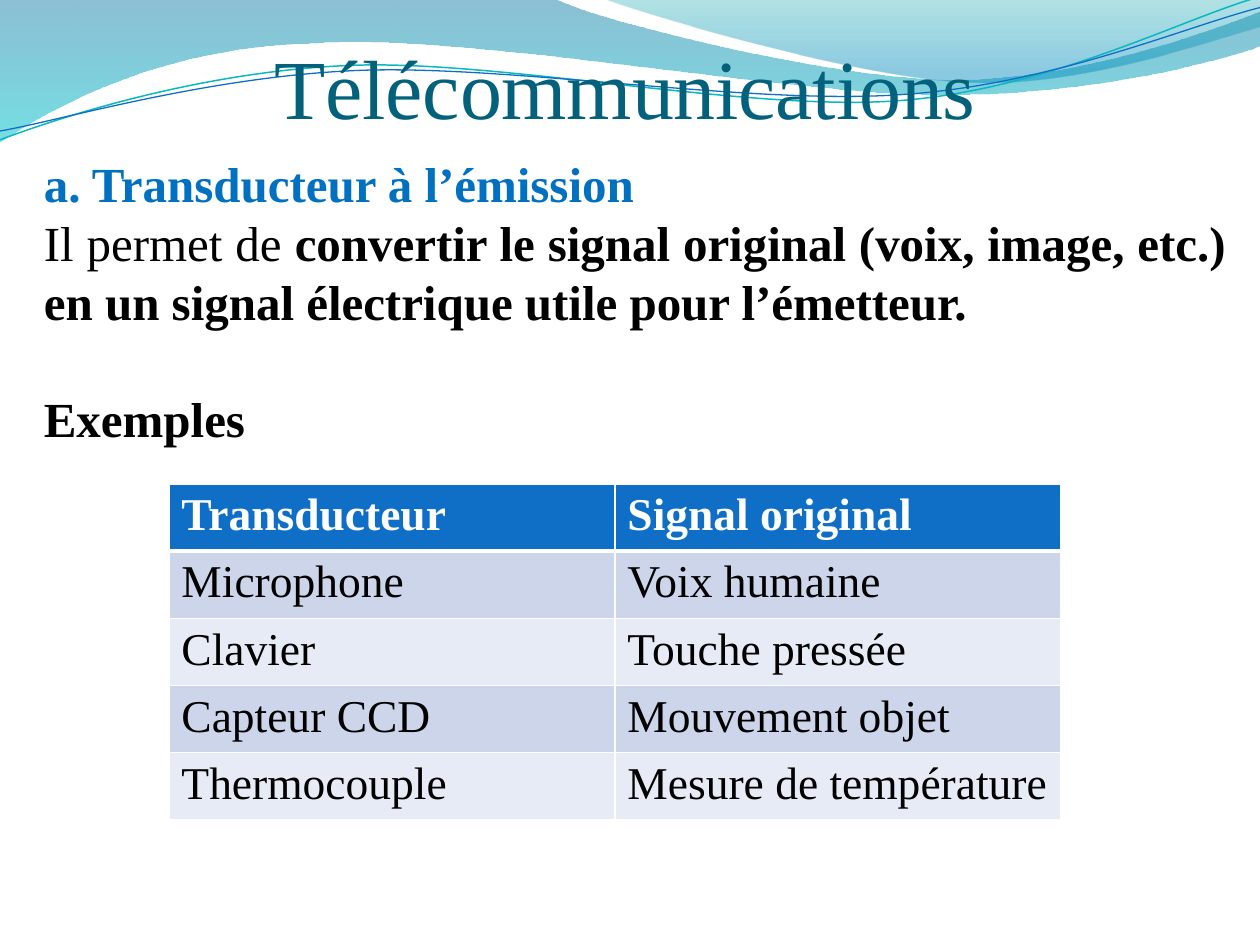
from lxml import etree
from pptx import Presentation
from pptx.dml.color import RGBColor
from pptx.enum.text import MSO_ANCHOR, PP_ALIGN
from pptx.oxml.ns import qn
from pptx.util import Inches, Pt

JUSTIFY, BOTTOM = PP_ALIGN.JUSTIFY, MSO_ANCHOR.BOTTOM
FONT = "Times New Roman"
COLORS = {
    "title": "04617B", "heading": "0070C0", "text": "000000", "white": "FFFFFF",
    "header": "0F6FC6", "band_dark": "CCD5EA", "band_light": "E7EBF5",
    "wave_top": "0074A1", "wave_bottom": "00C6CF",
    "crest_top": "00A1A9", "crest_bottom": "008BBF",
    "teal_line": "0AB8BF", "blue_line": "0F6FC6",
}


def rgb(name):
    return RGBColor.from_string(COLORS[name])


def add_curve(s, start, segments, closed):
    """Outline from line segments (x, y) and cubic Bezier segments (6 numbers)."""
    points = [(Inches(seg[i]), Inches(seg[i + 1]))
              for seg in segments for i in range(0, len(seg), 2)]
    fb = s.shapes.build_freeform(Inches(start[0]), Inches(start[1]))
    fb.add_line_segments(points, close=closed)
    sp = fb.convert_to_shape()
    sp.shadow.inherit = False
    # Join each curve's three points into one Bezier element
    lines = iter(list(sp._element.spPr.iter(qn("a:lnTo"))))
    for seg in segments:
        first = next(lines)
        if len(seg) == 6:
            first.tag = qn("a:cubicBezTo")
            for _ in range(2):
                line = next(lines)
                first.append(line[0])
                line.getparent().remove(line)
    return sp


prs = Presentation()
prs.slide_width, prs.slide_height = Inches(10), Inches(7.5)
s = prs.slides.add_slide(prs.slide_layouts[6])

# Translucent waves across the top
waves = [
    ((0, 0), [(4.4, -0.01), (4.76, 0.17, 6.64, 0.63, 7.58, 0.63),
              (8.53, 0.63, 9.58, 0.26, 10, 0.09), (10.01, 0.36),
              (9.83, 0.44, 8.7, 0.76, 7.46, 0.75),
              (6.22, 0.75, 3.82, 0.28, 2.57, 0.34),
              (1.29, 0.36, 0.46, 0.83, -0.01, 1.13)],
     [("wave_top", 0, 45), ("wave_bottom", 1, 55)]),
    ((4.79, -0.01), [(5.09, 0.11, 6.82, 0.62, 7.69, 0.65),
                     (8.56, 0.69, 9.61, 0.32, 10, 0.21), (10, 0)],
     [("crest_top", 0, 30), ("crest_bottom", 0.8, 45)]),
]
for start, segments, stops in waves:
    sp = add_curve(s, start, segments, True)
    sp.line.fill.background()
    sp.fill.gradient()
    sp.fill.gradient_angle = 270
    for stop, (color, position, _) in zip(sp.fill.gradient_stops, stops):
        stop.color.rgb = rgb(color)
        stop.position = position
    for clr, (_, _, opacity) in zip(sp._element.spPr.iter(qn("a:srgbClr")), stops):
        etree.SubElement(clr, qn("a:alpha")).set("val", str(opacity * 1000))

wave_lines = [
    ("teal_line", 0.85, (0, 1.11), [(0.48, 0.93, 1.58, 0.57, 2.77, 0.52),
                                    (3.95, 0.47, 5.93, 0.89, 7.13, 0.8),
                                    (8.33, 0.71, 9.38, 0.15, 9.98, -0.02)]),
    ("blue_line", 0.75, (0, 1.04), [(0.47, 0.96, 1.64, 0.61, 2.83, 0.56),
                                    (4.03, 0.51, 5.97, 0.84, 7.17, 0.75),
                                    (8.36, 0.67, 9.41, 0.21, 10, 0.06)]),
]
for color, width, start, segments in wave_lines:
    sp = add_curve(s, start, segments, False)
    sp.fill.background()
    sp.line.color.rgb = rgb(color)
    sp.line.width = Pt(width)

# Title and body text: (space before, alignment, [(text, colour, bold)])
title = [(0, None, [("Télécommunications", "title", False)])]
body = [
    (0, JUSTIFY, [("a. Transducteur à l’émission", "heading", True)]),
    (0, JUSTIFY, [("Il permet de ", "text", False),
                  ("convertir le signal original (voix, image, etc.) "
                   "en un signal électrique utile pour l’émetteur.", "text", True)]),
    (33.6, JUSTIFY, [("Exemples", "text", True)]),
]
title_box = s.shapes.add_textbox(Inches(2.18), Inches(0.26), Inches(5.67), Inches(0.82))
body_box = s.shapes.add_textbox(Inches(0.25), Inches(1.17), Inches(9.58), Inches(5.99))
for box, size, paragraphs in ((title_box, 48, title), (body_box, 28, body)):
    tf = box.text_frame
    tf.word_wrap = True
    for i, (before, align, runs) in enumerate(paragraphs):
        p = tf.add_paragraph() if i else tf.paragraphs[0]
        p.alignment = align
        p.space_before = Pt(before)
        for text, color, bold in runs:
            r = p.add_run()
            r.text = text
            r.font.name, r.font.size, r.font.bold = FONT, Pt(size), bold
            r.font.color.rgb = rgb(color)
tf = title_box.text_frame
tf.vertical_anchor = BOTTOM
tf.margin_left = tf.margin_right = tf.margin_bottom = 0
tf.margin_top = Inches(0.01)
tf.paragraphs[0].runs[0].font._element.set("spc", "-10")

# Table of examples
rows = [
    ("Transducteur", "Signal original"),
    ("Microphone", "Voix humaine"),
    ("Clavier", "Touche pressée"),
    ("Capteur CCD", "Mouvement objet"),
    ("Thermocouple", "Mesure de température"),
]
table = s.shapes.add_table(len(rows), 2, Inches(1.34), Inches(3.84),
                           Inches(7.08), Inches(2.66)).table
for i, row in enumerate(rows):
    fill = "header" if i == 0 else ("band_light", "band_dark")[i % 2]
    for j, text in enumerate(row):
        cell = table.cell(i, j)
        cell.text = text
        font = cell.text_frame.paragraphs[0].runs[0].font
        font.name, font.size, font.bold = FONT, Pt(26), i == 0
        font.color.rgb = rgb("text" if i else "white")
        tcPr = cell._tc.get_or_add_tcPr()
        for side in ("lnL", "lnR", "lnT", "lnB"):
            thick = (i == 0 and side == "lnB") or (i == 1 and side == "lnT")
            ln = etree.SubElement(tcPr, qn("a:" + side), w=str(Pt(3 if thick else 1)))
            solid = etree.SubElement(ln, qn("a:solidFill"))
            etree.SubElement(solid, qn("a:srgbClr"), val=COLORS["white"])
        cell.fill.solid()
        cell.fill.fore_color.rgb = rgb(fill)

prs.save("out.pptx")
